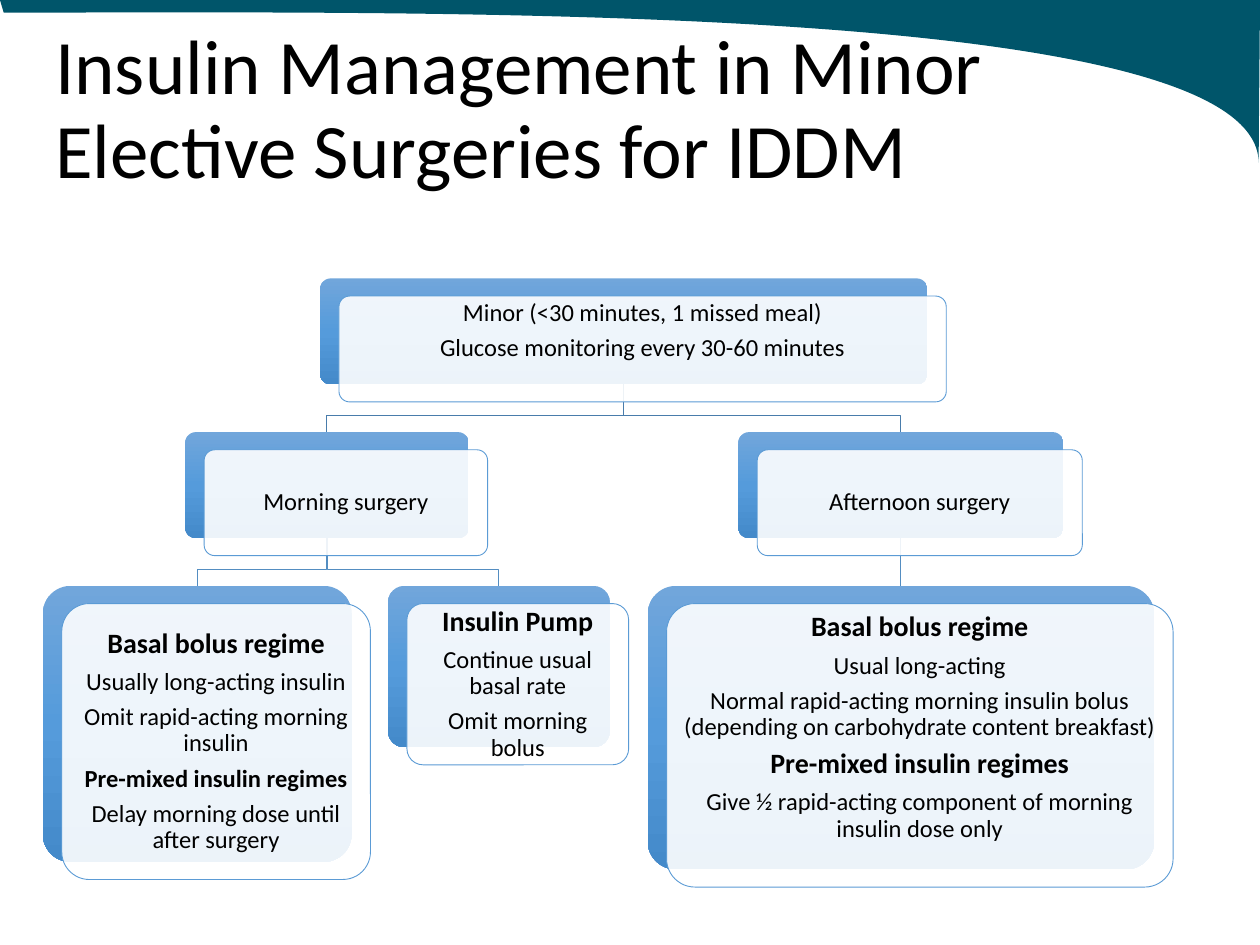
from copy import deepcopy
from dataclasses import dataclass

from lxml.etree import SubElement
from pptx import Presentation
from pptx.dml.color import RGBColor
from pptx.enum.shapes import MSO_CONNECTOR as Connector, MSO_SHAPE as Shape
from pptx.enum.text import MSO_ANCHOR as Anchor, PP_ALIGN as Align
from pptx.oxml.ns import qn
from pptx.util import Inches, Pt


@dataclass(frozen=True)
class Theme:
    font: str = "Calibri"
    ink: str = "000000"
    banner: str = "00556A"
    gradient: tuple = ((0, "71A6DB"), (0.5, "559BDB"), (1, "448ACA"))
    face: str = "FFFFFF"
    face_alpha: int = 90000
    outline: str = "5B9BD5"
    upper_link: str = "497CAB"
    lower_link: str = "538DC1"
    title_size: int = 44
    heading_size: int = 16
    body_size: int = 14
    hairline: float = 0.5
    line_spacing: float = 0.9
    gap_share: float = 0.35


@dataclass(frozen=True)
class Box:
    left: float
    top: float
    width: float
    height: float

    @property
    def middle(self):
        return self.left + self.width / 2

    @property
    def bottom(self):
        return self.top + self.height

    def shifted(self, across, down):
        return Box(self.left + across, self.top + down, self.width, self.height)

    def grid(self):
        return [grid(n) for n in (self.left, self.top, self.width, self.height)]


@dataclass(frozen=True)
class Card:
    box: Box
    lines: tuple
    foot: float = 0.06


THEME = Theme()
COLUMNS, ROWS = 10, 7.5
SLIDE_WIDTH = Inches(10)
FACE_SHIFT = (0.15, 0.14)
INSET = 0.06
RAISED_FOOT = 0.34
BEND = 0.13
LEVELS = (2.21, 3.43, 4.65)
HEADING = (THEME.heading_size, True)
SUBHEADING = (THEME.body_size, True)
BODY = (THEME.body_size, False)

CARDS = {
    "minor": Card(Box(2.54, LEVELS[0], 4.82, 0.84), (
        ("Minor (<30 minutes, 1 missed meal)", BODY),
        ("Glucose monitoring every 30-60 minutes", BODY),
    ), RAISED_FOOT),
    "morning": Card(Box(1.47, LEVELS[1], 2.25, 0.84), (
        ("Morning surgery", BODY),
    )),
    "morning basal": Card(Box(0.34, LEVELS[2], 2.45, 2.19), (
        ("Basal bolus regime", HEADING),
        ("Usually long-acting insulin", BODY),
        ("Omit rapid-acting morning insulin", BODY),
        ("Pre-mixed insulin regimes", SUBHEADING),
        ("Delay morning dose until after surgery", BODY),
    )),
    "pump": Card(Box(3.08, LEVELS[2], 1.76, 1.28), (
        ("Insulin Pump", HEADING),
        ("Continue usual basal rate", BODY),
        ("Omit morning bolus", BODY),
    )),
    "afternoon": Card(Box(5.86, LEVELS[1], 2.58, 0.84), (
        ("Afternoon surgery", BODY),
    )),
    "afternoon basal": Card(Box(5.14, LEVELS[2], 4.02, 2.25), (
        ("Basal bolus regime", HEADING),
        ("Usual long-acting", BODY),
        ("Normal rapid-acting morning insulin bolus "
         "(depending on carbohydrate content breakfast)", BODY),
        ("Pre-mixed insulin regimes", HEADING),
        ("Give ½ rapid-acting component of morning insulin dose only", BODY),
    ), RAISED_FOOT),
}
BENT_LINKS = (
    ("minor", "afternoon", THEME.upper_link),
    ("morning", "pump", THEME.lower_link),
    ("morning", "morning basal", THEME.lower_link),
    ("minor", "morning", THEME.upper_link),
)


def grid(units):
    return round(SLIDE_WIDTH * units / COLUMNS)


def rgb(code):
    return RGBColor.from_string(code)


def style_line(line, color):
    line.color.rgb = rgb(color)
    line.width = Pt(THEME.hairline)


def style_paragraph(paragraph, size, bold):
    paragraph.line_spacing = THEME.line_spacing
    font = paragraph.font
    font.name, font.size, font.bold = THEME.font, Pt(size), bold
    font.color.rgb = rgb(THEME.ink)


def outline_shape(slide, points, close):
    start, *rest = [(grid(x), grid(y)) for x, y in points]
    builder = slide.shapes.build_freeform(*start)
    builder.add_line_segments(rest, close=close)
    shape = builder.convert_to_shape()
    shape.shadow.inherit = False
    return shape


def bend_segment(segment, controls):
    segment.tag = qn("a:cubicBezTo")
    for index, (x, y) in enumerate(controls):
        segment.insert(index, segment.makeelement(
            qn("a:pt"), {"x": str(grid(x)), "y": str(grid(y))}))


def add_banner(slide, box):
    right = box.left + box.width
    edge = right - 0.01
    corners = [(box.left, box.top), (right, box.top),
               (edge, box.bottom), (box.left + 0.03, 0.1)]
    banner = outline_shape(slide, corners, True)
    segments = list(banner._element.iter(qn("a:lnTo")))
    bend_segment(segments[1], [(right, 0.14), (edge, 1.15)])
    bend_segment(segments[2], [(9.98, 0), (3.36, 0.1)])
    banner.fill.solid()
    banner.fill.fore_color.rgb = rgb(THEME.banner)
    banner.line.fill.background()


def add_title(slide, box):
    frame = slide.shapes.add_textbox(*box.grid()).text_frame
    frame.word_wrap = True
    frame.vertical_anchor = Anchor.MIDDLE
    frame.text = "Insulin Management in Minor Elective Surgeries for IDDM"
    style_paragraph(frame.paragraphs[0], THEME.title_size, False)


def add_panel(slide, box):
    panel = slide.shapes.add_shape(Shape.ROUNDED_RECTANGLE, *box.grid())
    panel.adjustments[0] = 0.1
    panel.shadow.inherit = False
    return panel


def add_backing(slide, box):
    backing = add_panel(slide, box)
    backing.line.fill.background()
    backing.fill.gradient()
    backing.fill.gradient_angle = 270
    stops = backing._element.spPr.find(qn("a:gradFill")).find(qn("a:gsLst"))
    stops.append(deepcopy(stops[-1]))
    for stop, (position, color) in zip(backing.fill.gradient_stops, THEME.gradient):
        stop.position = position
        stop.color.rgb = rgb(color)
    return backing


def add_face(slide, box, card):
    face = add_panel(slide, box)
    face.fill.solid()
    face.fill.fore_color.rgb = rgb(THEME.face)
    color = face._element.spPr.find(qn("a:solidFill"))[0]
    SubElement(color, qn("a:alpha"), val=str(THEME.face_alpha))
    style_line(face.line, THEME.outline)
    frame = face.text_frame
    frame.word_wrap = True
    frame.vertical_anchor = Anchor.MIDDLE
    frame.margin_left = frame.margin_right = frame.margin_top = grid(INSET)
    frame.margin_bottom = grid(card.foot)
    frame.text = "\n".join(text for text, _ in card.lines)
    for paragraph, (_, (size, bold)) in zip(frame.paragraphs, card.lines):
        paragraph.alignment = Align.CENTER
        paragraph.space_after = Pt(round(size * THEME.gap_share, 1))
        style_paragraph(paragraph, size, bold)


def add_bent_link(slide, parent, child, color):
    bend = child.top - BEND
    points = [(parent.middle, parent.bottom), (parent.middle, bend),
              (child.middle, bend), (child.middle, child.top)]
    link = outline_shape(slide, points, False)
    link.fill.background()
    style_line(link.line, color)


def add_straight_link(slide, parent, child, color):
    link = slide.shapes.add_connector(Connector.STRAIGHT, 0, 0, 0, 0)
    link.begin_connect(parent, 2)
    link.end_connect(child, 0)
    style_line(link.line, color)
    SubElement(link._element.spPr, qn("a:effectLst"))


def add_tree(slide):
    backings = {key: add_backing(slide, card.box) for key, card in CARDS.items()}
    for parent, child, color in BENT_LINKS:
        add_bent_link(slide, CARDS[parent].box, CARDS[child].box, color)
    add_straight_link(slide, backings["afternoon"], backings["afternoon basal"],
                      THEME.lower_link)
    for card in CARDS.values():
        add_face(slide, card.box.shifted(*FACE_SHIFT), card)


def main():
    deck = Presentation()
    deck.slide_width, deck.slide_height = SLIDE_WIDTH, grid(ROWS)
    slide = deck.slides.add_slide(deck.slide_layouts[6])
    add_banner(slide, Box(0, 0, COLUMNS, 1.29))
    add_title(slide, Box(0.34, 0.16, 8, 1.45))
    add_tree(slide)
    deck.save("out.pptx")


if __name__ == "__main__":
    main()
